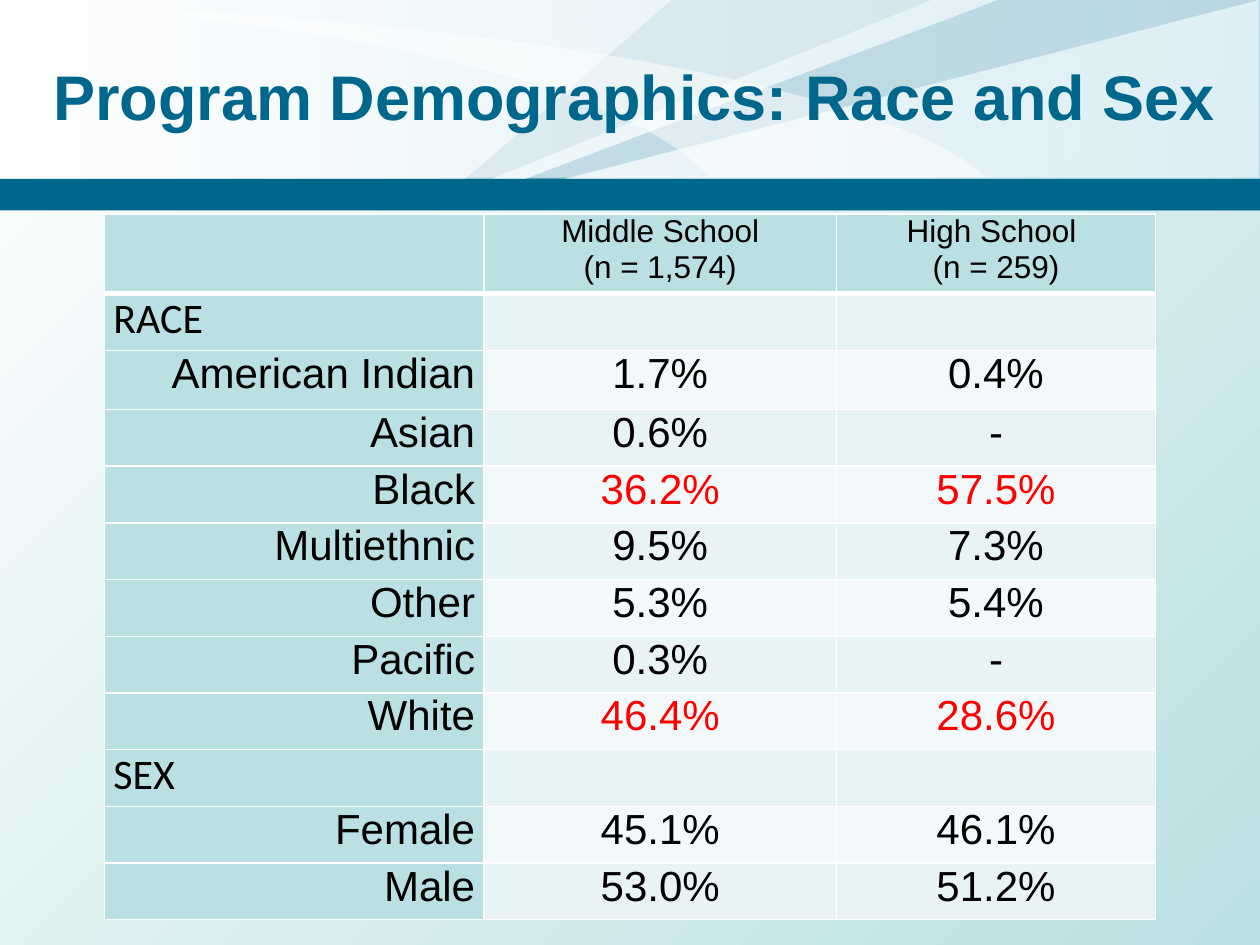
from dataclasses import dataclass

from lxml.etree import SubElement
from pptx import Presentation
from pptx.dml.color import RGBColor
from pptx.enum.shapes import MSO_SHAPE
from pptx.enum.text import MSO_ANCHOR, PP_ALIGN
from pptx.oxml.ns import qn
from pptx.util import Inches, Pt


@dataclass(frozen=True)
class Theme:
    """Colours, fonts and type sizes of the deck."""
    white: str = "FFFFFF"
    black: str = "000000"
    red: str = "FF0000"
    deep: str = "00678C"
    steel: str = "4F91A9"
    sky: str = "A9D7E7"
    teal: str = "BBE0E3"
    band_dark: str = "E7F3F4"
    band_light: str = "F3F9FA"
    body_font: str = "Arial"
    group_font: str = "Calibri"
    title_size: int = 36
    header_size: int = 18
    body_size: int = 24


THEME = Theme()
HEADERS = ["", "Middle School\n(n = 1,574)", "High School \n(n = 259)"]
ROWS = [
    ("RACE",),
    ("American Indian", "1.7%", "0.4%"),
    ("Asian", "0.6%", "-"),
    ("Black", "36.2%", "57.5%"),
    ("Multiethnic", "9.5%", "7.3%"),
    ("Other", "5.3%", "5.4%"),
    ("Pacific", "0.3%", "-"),
    ("White", "46.4%", "28.6%"),
    ("SEX",),
    ("Female", "45.1%", "46.1%"),
    ("Male", "53.0%", "51.2%"),
]
HIGHLIGHTED = {"Black", "White"}
COLUMN_WIDTHS = [3.01, 2.8, 2.53]
ROW_HEIGHTS = {0: 0.63, 2: 0.47}
ROW_HEIGHT = 0.45


def rgb(color):
    """Turn a hex string into a colour."""
    return RGBColor.from_string(color)


def set_alpha(color_element, percent):
    """Make a colour element partly transparent."""
    SubElement(color_element, qn("a:alpha")).set("val", str(percent * 1000))


def set_gradient(fill, colors, angle):
    """Fill with a two-stop linear gradient."""
    fill.gradient()
    fill.gradient_angle = angle
    for stop, color in zip(fill.gradient_stops, colors):
        stop.color.rgb = rgb(color)


def paint(shape, color, opacity=100):
    """Give a shape a flat fill without line or shadow."""
    shape.shadow.inherit = False
    shape.line.fill.background()
    shape.fill.solid()
    shape.fill.fore_color.rgb = rgb(color)
    if opacity < 100:
        set_alpha(shape._element.spPr.find(".//" + qn("a:srgbClr")), opacity)


def add_panel(page, box, color, opacity=100):
    """Add a plain rectangle."""
    panel = page.shapes.add_shape(MSO_SHAPE.RECTANGLE, *map(Inches, box))
    paint(panel, color, opacity)
    return panel


def add_outline(page, origin, points, color, opacity):
    """Add a closed outline whose points are relative to the origin."""
    left, top = origin
    spots = [(Inches(left + x), Inches(top + y)) for x, y in points]
    builder = page.shapes.build_freeform(*spots[0])
    builder.add_line_segments(spots[1:], close=True)
    paint(builder.convert_to_shape(), color, opacity)


def curve(start, first, second, end, steps=24):
    """Sample a cubic curve."""
    points = []
    for step in range(steps + 1):
        t = step / steps
        weights = ((1 - t) ** 3, 3 * t * (1 - t) ** 2, 3 * t * t * (1 - t), t ** 3)
        corners = (start, first, second, end)
        points.append(tuple(sum(w * c[axis] for w, c in zip(weights, corners)) for axis in (0, 1)))
    return points


def add_banner(page, box):
    """Draw the banner with its light beams, swoosh and bottom bar."""
    left, top, width, height = box
    backdrop = add_panel(page, box, THEME.white)
    set_gradient(backdrop.fill, (THEME.white, THEME.sky), 0)
    set_alpha(backdrop._element.spPr.findall(".//" + qn("a:srgbClr"))[-1], 72)
    origin = (left, top)
    add_outline(page, origin, [(5.33, 0), (7.39, 0), (3.51, 1.58)], THEME.steel, 29)
    add_outline(page, origin, [(7.92, 0), (9.99, 0), (3.51, height)], THEME.deep, 43)
    add_panel(page, (left, top + height - 0.25, width, 0.25), THEME.deep)
    upper = curve((5.64, 1.41), (4.51, 0.2), (0.01, 0.01), (0.01, 0.01))
    lower = curve((0.01, 0.01), (6.93, 0.27), (7.83, 1.41), (7.83, 1.41))
    add_outline(page, origin, upper + lower[1:], THEME.white, 50)
    add_panel(page, (left, top, width - 0.01, 1.41), THEME.white, 55)


def style_text(frame, font, size, color, align, bold=False):
    """Format every paragraph of a text frame."""
    for para in frame.paragraphs:
        para.alignment = align
        for span in para.runs:
            span.font.name = font
            span.font.size = Pt(size)
            span.font.bold = bold
            span.font.color.rgb = rgb(color)


def add_title(page, box, text):
    """Place the slide title."""
    frame = page.shapes.add_textbox(*map(Inches, box)).text_frame
    frame.word_wrap = True
    frame.vertical_anchor = MSO_ANCHOR.MIDDLE
    frame.text = text
    style_text(frame, THEME.body_font, THEME.title_size, THEME.deep, PP_ALIGN.CENTER, True)


def set_borders(cell, top, bottom):
    """Draw white cell borders with the given top and bottom widths."""
    properties = cell._tc.get_or_add_tcPr()
    for side, width in (("L", 1), ("R", 1), ("T", top), ("B", bottom)):
        line = SubElement(properties, qn(f"a:ln{side}"), w=str(Pt(width)))
        fill = SubElement(line, qn("a:solidFill"))
        SubElement(fill, qn("a:srgbClr"), val=THEME.white)


def fill_cell(cell, text, row, column):
    """Write and style one cell according to its place in the table."""
    set_borders(cell, 3 if row == 1 else 1, 3 if row == 0 else 1)
    band = THEME.band_dark if row % 2 else THEME.band_light
    cell.fill.solid()
    cell.fill.fore_color.rgb = rgb(THEME.teal if row == 0 or column == 0 else band)
    if not text:
        return
    cell.margin_left = cell.margin_right = Inches(0.07)
    cell.margin_top = cell.margin_bottom = 0
    cell.text_frame.text = text
    is_group = row > 0 and len(ROWS[row - 1]) == 1
    is_red = row > 0 and column > 0 and ROWS[row - 1][0] in HIGHLIGHTED
    label_align = PP_ALIGN.LEFT if is_group else PP_ALIGN.RIGHT
    style_text(
        cell.text_frame,
        THEME.group_font if is_group else THEME.body_font,
        THEME.body_size if row else THEME.header_size,
        THEME.red if is_red else THEME.black,
        PP_ALIGN.CENTER if column else label_align,
    )


def add_demographics(page, box):
    """Build the table of race and sex by school level."""
    records = [HEADERS, *ROWS]
    table = page.shapes.add_table(len(records), len(HEADERS), *map(Inches, box)).table
    for column, width in enumerate(COLUMN_WIDTHS):
        table.columns[column].width = Inches(width)
    for row, record in enumerate(records):
        table.rows[row].height = Inches(ROW_HEIGHTS.get(row, ROW_HEIGHT))
        for column in range(len(HEADERS)):
            text = record[column] if column < len(record) else ""
            fill_cell(table.cell(row, column), text, row, column)


def main():
    """Build the slide and save the deck."""
    deck = Presentation()
    deck.slide_width, deck.slide_height = Inches(10), Inches(7.5)
    page = deck.slides.add_slide(deck.slide_layouts[6])
    set_gradient(page.background.fill, (THEME.white, THEME.teal), 315)
    add_banner(page, (0, 0, 10, 1.67))
    add_demographics(page, (0.83, 1.7, 8.34, 5.57))
    add_title(page, (0.29, 0.2, 9.49, 1.11), "Program Demographics: Race and Sex")
    deck.save("out.pptx")


if __name__ == "__main__":
    main()
